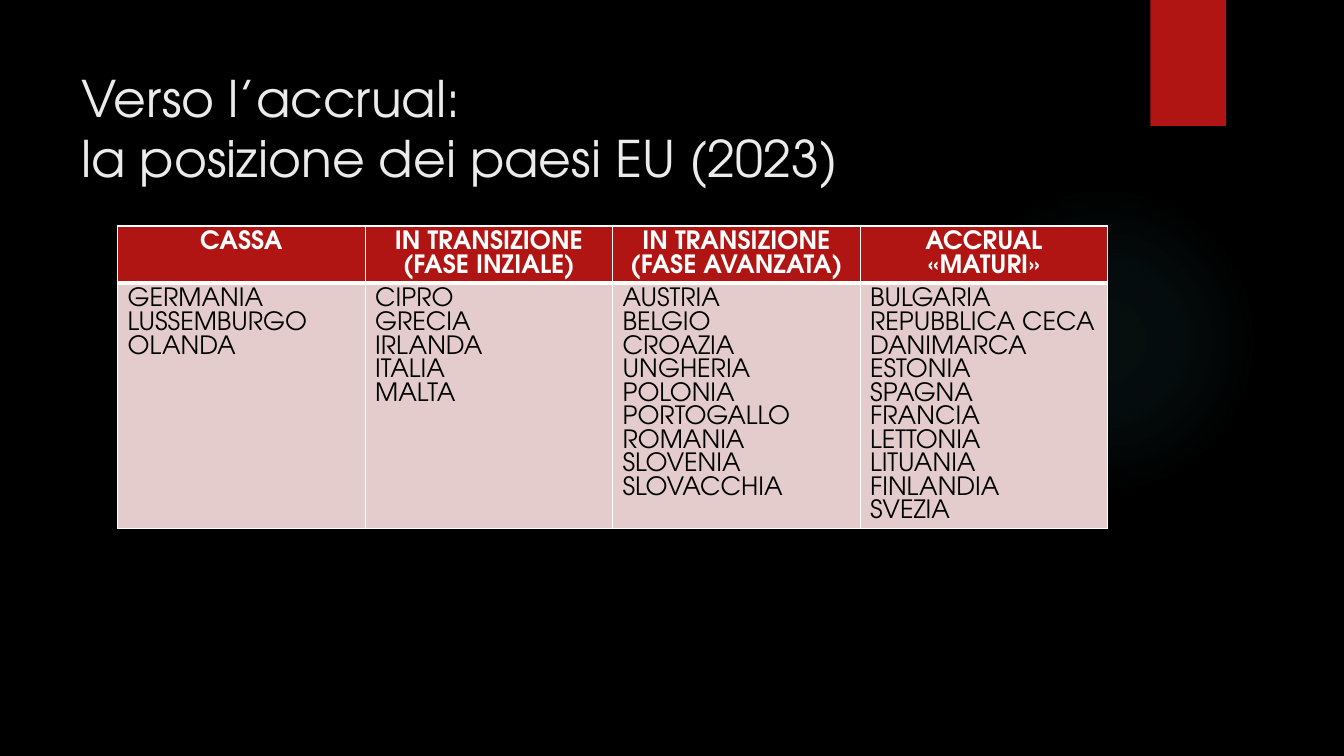
from dataclasses import dataclass

from lxml.etree import SubElement
from pptx import Presentation
from pptx.dml.color import RGBColor as RGB
from pptx.enum.shapes import MSO_SHAPE as Kind
from pptx.enum.text import MSO_ANCHOR as Anchor, PP_ALIGN as Align
from pptx.oxml import parse_xml
from pptx.oxml.ns import nsdecls, qn
from pptx.util import Pt


@dataclass(frozen=True)
class Theme:
    font: str = "TeX Gyre Adventor"
    back: str = "000000"
    red: str = "B01513"
    pink: str = "E4CCCC"
    glow: str = "50B9C1"
    title: str = "EBEBEB"
    white: str = "FFFFFF"
    black: str = "000000"
    big: float = 36
    small: float = 18
    big_line: float = 42.9
    small_line: float = 16.8


THEME = Theme()

GROUPS = [
    ("CASSA", "GERMANIA LUSSEMBURGO OLANDA".split()),
    ("IN TRANSIZIONE\n(FASE INZIALE)", "CIPRO GRECIA IRLANDA ITALIA MALTA".split()),
    ("IN TRANSIZIONE\n(FASE AVANZATA)",
     "AUSTRIA BELGIO CROAZIA UNGHERIA POLONIA PORTOGALLO ROMANIA SLOVENIA "
     "SLOVACCHIA".split()),
    ("ACCRUAL «MATURI»",
     ["BULGARIA", "REPUBBLICA CECA", "DANIMARCA", "ESTONIA", "SPAGNA", "FRANCIA",
      "LETTONIA", "LITUANIA", "FINLANDIA", "SVEZIA"]),
]


def style(frame, size, line, color, bold=False, align=Align.LEFT):
    for para in frame.paragraphs:
        para.alignment = align
        para.line_spacing = Pt(line)
        for run in para.runs:
            font = run.font
            font.name, font.size, font.bold = THEME.font, Pt(size), bold
            font.color.rgb = RGB.from_string(color)


def add_shape(slide, kind, left, top, width, height, color):
    shape = slide.shapes.add_shape(kind, Pt(left), Pt(top), Pt(width), Pt(height))
    shape.shadow.inherit = False
    shape.fill.solid()
    shape.fill.fore_color.rgb = RGB.from_string(color)
    shape.line.fill.background()
    return shape


def fade(shape, color, stops):
    """Swap the solid fill for a round gradient of (position, opacity) percents."""
    marks = "".join(
        f'<a:gs pos="{pos * 1000}"><a:srgbClr val="{color}">'
        f'<a:alpha val="{alpha * 1000}"/></a:srgbClr></a:gs>'
        for pos, alpha in stops)
    grad = parse_xml(
        f'<a:gradFill {nsdecls("a")}><a:gsLst>{marks}</a:gsLst><a:path path="circle">'
        '<a:fillToRect l="50000" t="50000" r="50000" b="50000"/></a:path></a:gradFill>')
    props = shape.element.spPr
    props.replace(props.find(qn("a:solidFill")), grad)


def add_title(slide, text):
    box = slide.shapes.add_textbox(Pt(51), Pt(36), Pt(741), Pt(110))
    frame = box.text_frame
    frame.word_wrap = True
    frame.vertical_anchor = Anchor.MIDDLE
    frame.text = text
    style(frame, THEME.big, THEME.big_line, THEME.title)


def add_border(cell, side, width):
    props = cell._tc.get_or_add_tcPr()
    line = SubElement(props, qn(f"a:ln{side}"), w=str(Pt(width)))
    fill = SubElement(line, qn("a:solidFill"))
    SubElement(fill, qn("a:srgbClr"), val=THEME.white)


def fill_cell(cell, text, fill, color, thick, bold=False, align=Align.LEFT):
    cell.text = text
    style(cell.text_frame, THEME.small, THEME.small_line, color, bold, align)
    for side in "LRTB":
        add_border(cell, side, 3 if side == thick else 1)
    cell.fill.solid()
    cell.fill.fore_color.rgb = RGB.from_string(fill)


def add_groups(slide, groups):
    heights = (40.8, 175.2)
    width = 176.8
    table = slide.shapes.add_table(
        len(heights), len(groups), Pt(84), Pt(161.5),
        Pt(width * len(groups)), Pt(sum(heights))).table
    table.horz_banding = False
    for row, height in zip(table.rows, heights):
        row.height = Pt(height)
    for col, (head, lands) in enumerate(groups):
        table.columns[col].width = Pt(width)
        fill_cell(table.cell(0, col), head, THEME.red, THEME.white, "B",
                  True, Align.CENTER)
        fill_cell(table.cell(1, col), "\n".join(lands), THEME.pink, THEME.black, "T")


def main():
    deck = Presentation()
    deck.slide_width, deck.slide_height = Pt(960), Pt(540)
    slide = deck.slides.add_slide(deck.slide_layouts[6])
    slide.background.fill.solid()
    slide.background.fill.fore_color.rgb = RGB.from_string(THEME.back)
    glow = add_shape(slide, Kind.OVAL, 677.5, 132, 222, 222, THEME.glow)
    fade(glow, THEME.glow, [(0, 7), (36, 6), (69, 0)])
    add_shape(slide, Kind.RECTANGLE, 821.75, 0, 54, 90, THEME.red)
    add_title(slide, "Verso l’accrual:\vla posizione dei paesi EU (2023)")
    add_groups(slide, GROUPS)
    deck.save("out.pptx")


if __name__ == "__main__":
    main()
